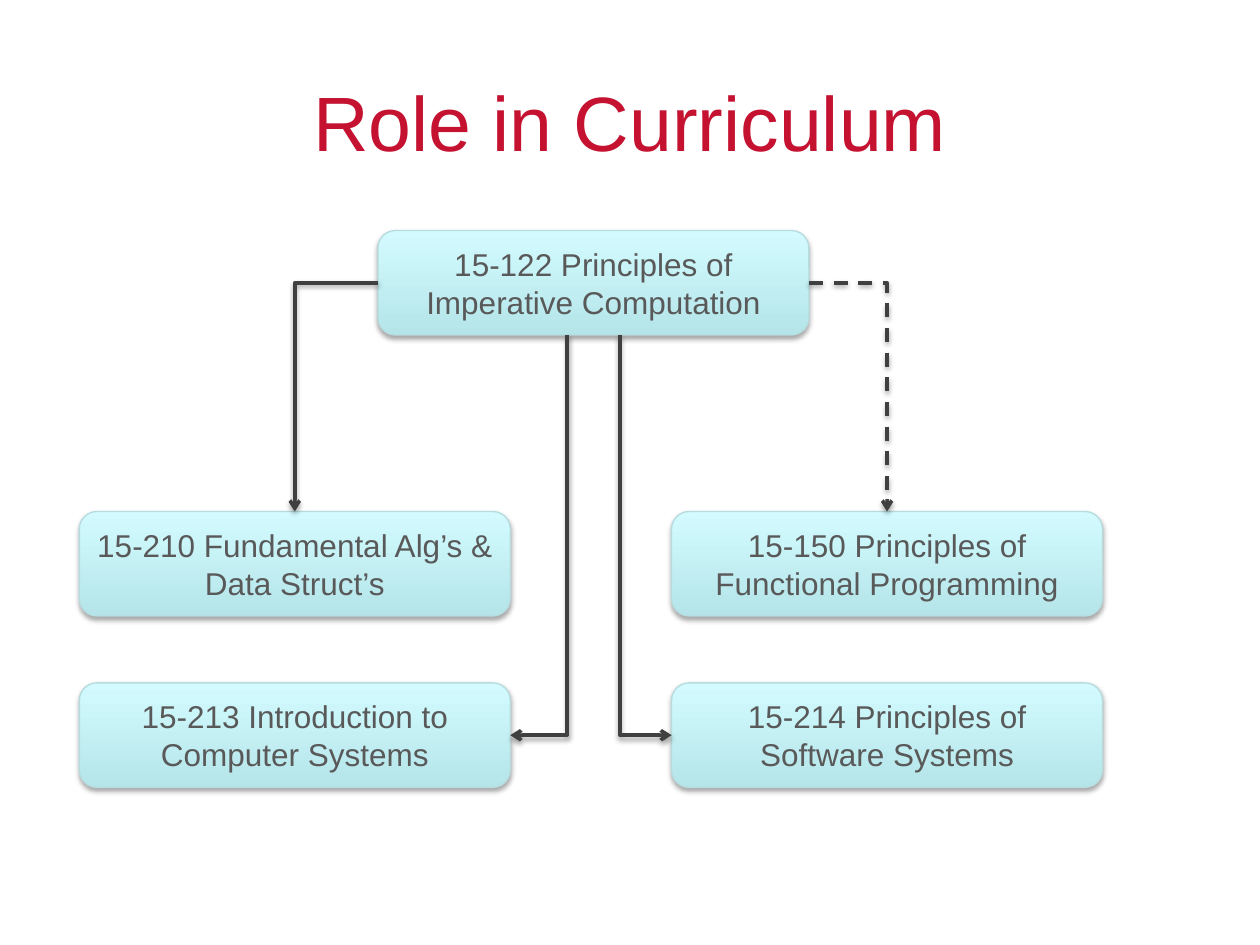
from dataclasses import dataclass

import lxml.etree
import pptx
import pptx.dml.color
import pptx.enum.dml
import pptx.enum.shapes
import pptx.enum.text
import pptx.oxml
import pptx.oxml.ns
import pptx.util

Inches = pptx.util.Inches
Pt = pptx.util.Pt
RGB = pptx.dml.color.RGBColor.from_string
qn = pptx.oxml.ns.qn


@dataclass(frozen=True)
class Theme:
    """Colours, font and type sizes of the slide."""
    font: str = "Arial"
    title: str = "C41230"
    text: str = "595959"
    box_bottom: str = "B5E5E9"
    box_top: str = "D3FBFF"
    border: str = "B6DCDF"
    arrow: str = "404040"
    title_size: int = 44
    text_size: int = 18


THEME = Theme()
BOX_W, BOX_H = 3.42, 0.83
LEFT_X, RIGHT_X, ROOT_X = 0.63, 5.33, 3
ROOT_Y, UPPER_Y, LOWER_Y = 1.83, 4.06, 5.42


def write_text(tf, text, size, color):
    """Write one centred paragraph into a text frame."""
    tf.word_wrap = True
    tf.vertical_anchor = pptx.enum.text.MSO_ANCHOR.MIDDLE
    p = tf.paragraphs[0]
    p.alignment = pptx.enum.text.PP_ALIGN.CENTER
    r = p.add_run()
    r.text = text
    r.font.name = THEME.font
    r.font.size = Pt(size)
    r.font.color.rgb = RGB(color)


def add_shadow(sp, alpha, distance):
    """Give a shape or connector a soft black shadow below it."""
    spPr = sp._element.spPr
    effects = lxml.etree.SubElement(spPr, qn("a:effectLst"))
    shadow = lxml.etree.SubElement(
        effects, qn("a:outerShdw"), blurRad=str(Pt(3.1)), dist=str(Pt(distance)),
        dir="5400000", rotWithShape="0")
    color = lxml.etree.SubElement(shadow, qn("a:srgbClr"), val="000000")
    lxml.etree.SubElement(color, qn("a:alpha"), val=str(alpha * 1000))


def add_title(s, text, x, y, w, h):
    """Place the slide title in the given box."""
    tb = s.shapes.add_textbox(Inches(x), Inches(y), Inches(w), Inches(h))
    write_text(tb.text_frame, text, THEME.title_size, THEME.title)


def add_course(s, text, x, y):
    """Place a course box with its top left corner at x, y."""
    sp = s.shapes.add_shape(pptx.enum.shapes.MSO_SHAPE.ROUNDED_RECTANGLE,
                            Inches(x), Inches(y), Inches(BOX_W), Inches(BOX_H))
    sp.fill.gradient()
    sp.fill.gradient_angle = 90
    for stop, color in zip(sp.fill.gradient_stops, (THEME.box_bottom, THEME.box_top)):
        stop.color.rgb = RGB(color)
    sp.line.color.rgb = RGB(THEME.border)
    sp.line.width = Pt(0.75)
    add_shadow(sp, alpha=35, distance=1.8)
    tf = sp.text_frame
    tf.margin_left = tf.margin_right = Inches(0.08)
    write_text(tf, text, THEME.text_size, THEME.text)


def add_arrow(s, start, end, down_first=False, dashed=False):
    """Draw a one-bend arrow that leaves sideways, or downwards if asked."""
    (x1, y1), (x2, y2) = start, end
    rotation = 0
    if down_first:
        cx, cy = (x1 + x2) / 2, (y1 + y2) / 2
        half_w, half_h = (y2 - y1) / 2, abs(x2 - x1) / 2
        rotation, side = (90, 1) if x2 < x1 else (270, -1)
        x1, x2 = cx - side * half_w, cx + side * half_w
        y1, y2 = cy - half_h, cy + half_h
    c = s.shapes.add_connector(pptx.enum.shapes.MSO_CONNECTOR.ELBOW,
                               Inches(x1), Inches(y1), Inches(x2), Inches(y2))
    spPr = c._element.spPr
    spPr.find(qn("a:prstGeom")).set("prst", "bentConnector2")
    spPr.find(qn("a:xfrm")).set("rot", str(rotation * 60000))
    c.line.color.rgb = RGB(THEME.arrow)
    c.line.width = Pt(2)
    if dashed:
        c.line.dash_style = pptx.enum.dml.MSO_LINE.DASH
    lxml.etree.SubElement(spPr.find(qn("a:ln")), qn("a:tailEnd"), type="arrow")
    add_shadow(c, alpha=38, distance=1.6)


def add_curriculum(s):
    """Place the course boxes and the arrows from the root course."""
    add_course(s, "15-122 Principles of Imperative Computation", ROOT_X, ROOT_Y)
    add_course(s, "15-213 Introduction to Computer Systems", LEFT_X, LOWER_Y)
    add_course(s, "15-210 Fundamental Alg’s & Data Struct’s", LEFT_X, UPPER_Y)
    add_course(s, "15-150 Principles of Functional Programming", RIGHT_X, UPPER_Y)
    add_course(s, "15-214 Principles of Software Systems", RIGHT_X, LOWER_Y)

    root_mid, root_bottom = ROOT_Y + BOX_H / 2, ROOT_Y + BOX_H
    lower_mid = LOWER_Y + BOX_H / 2
    add_arrow(s, (ROOT_X, root_mid), (LEFT_X + BOX_W / 2, UPPER_Y))
    add_arrow(s, (ROOT_X + BOX_W, root_mid), (RIGHT_X + BOX_W / 2, UPPER_Y), dashed=True)
    add_arrow(s, (4.5, root_bottom), (LEFT_X + BOX_W, lower_mid), down_first=True)
    add_arrow(s, (4.92, root_bottom), (RIGHT_X, lower_mid), down_first=True)


def main():
    """Build the slide and save it."""
    prs = pptx.Presentation()
    prs.slide_width, prs.slide_height = Inches(10), Inches(7.5)
    s = prs.slides.add_slide(prs.slide_layouts[6])
    add_title(s, "Role in Curriculum", 0.75, 0.15, 8.5, 1.61)
    add_curriculum(s)
    prs.save("out.pptx")


if __name__ == "__main__":
    main()
